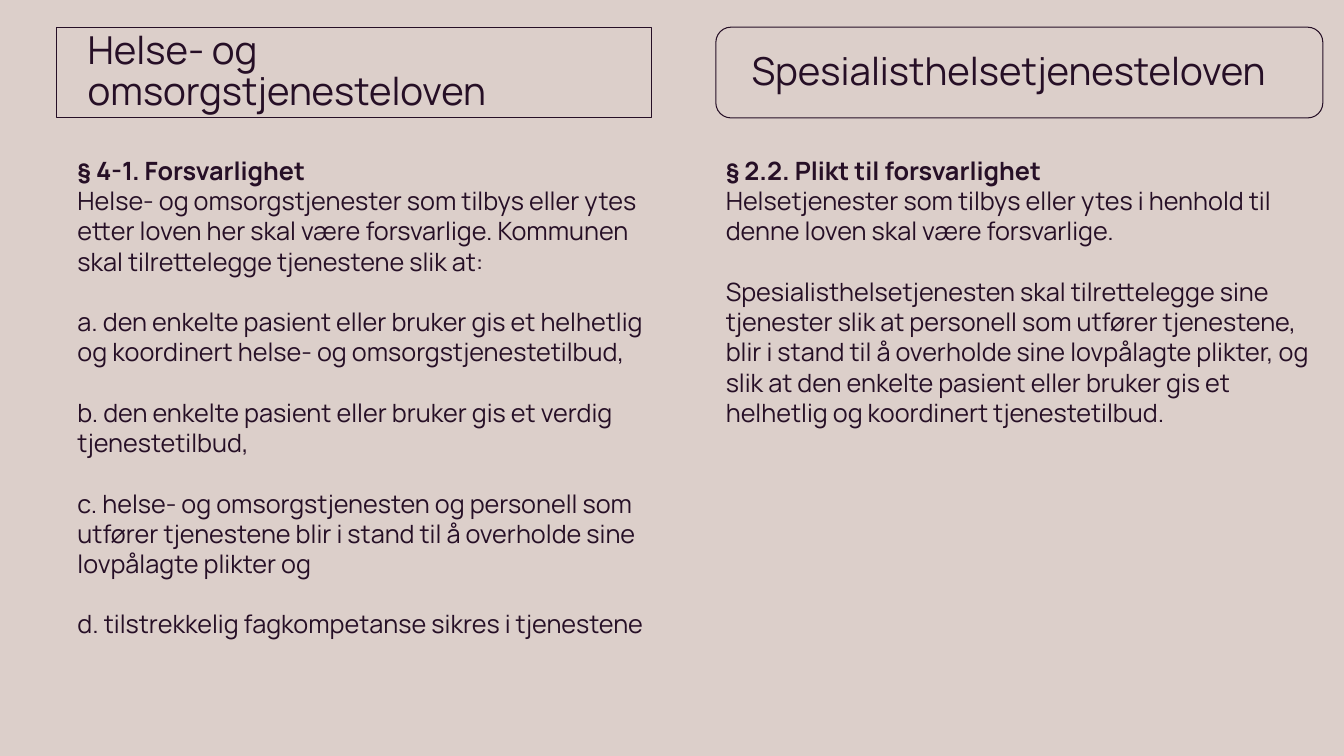
from dataclasses import dataclass

from pptx import Presentation
from pptx.dml.color import RGBColor
from pptx.enum.shapes import MSO_SHAPE
from pptx.enum.text import MSO_ANCHOR, PP_ALIGN
from pptx.slide import Slide
from pptx.util import Inches, Pt

BACKGROUND = RGBColor(0xDC, 0xCF, 0xCA)
PLUM = RGBColor(0x26, 0x0F, 0x26)
FONT = "Manrope"
TITLE_TOP, TITLE_HEIGHT = 0.27, 0.9
CORNER_RADIUS = 0.15
BODY_TOP = 1.49
BODY_SIZE = Pt(18)
PARAGRAPH_GAP = Pt(21.6)  # one line of body text


@dataclass
class LawColumn:
    title: str
    outline: MSO_SHAPE
    title_left: float
    title_width: float
    body_left: float
    body_width: float
    body_height: float
    section: str
    provisions: list[str]


COLUMNS = [
    LawColumn(
        "Helse- og omsorgstjenesteloven", MSO_SHAPE.RECTANGLE,
        0.56, 5.9, 0.67, 5.99, 5.59,
        "§ 4-1. Forsvarlighet",
        [
            "Helse- og omsorgstjenester som tilbys eller ytes etter loven her skal "
            "være forsvarlige. Kommunen skal tilrettelegge tjenestene slik at:",
            "a. den enkelte pasient eller bruker gis et helhetlig og koordinert "
            "helse- og omsorgstjenestetilbud,",
            "b. den enkelte pasient eller bruker gis et verdig tjenestetilbud,",
            "c. helse- og omsorgstjenesten og personell som utfører tjenestene blir "
            "i stand til å overholde sine lovpålagte plikter og",
            "d. tilstrekkelig fagkompetanse sikres i tjenestene",
        ],
    ),
    LawColumn(
        "Spesialisthelsetjenesteloven", MSO_SHAPE.ROUNDED_RECTANGLE,
        7.1, 6.02, 7.1, 6.19, 3.16,
        "§ 2.2. Plikt til forsvarlighet",
        [
            "Helsetjenester som tilbys eller ytes i henhold til denne loven skal "
            "være forsvarlige.",
            "Spesialisthelsetjenesten skal tilrettelegge sine tjenester slik at "
            "personell som utfører tjenestene, blir i stand til å overholde sine "
            "lovpålagte plikter, og slik at den enkelte pasient eller bruker gis et "
            "helhetlig og koordinert tjenestetilbud.",
        ],
    ),
]


def style_font(paragraph, size: Pt, bold: bool = False) -> None:
    font = paragraph.font
    font.name, font.size, font.bold = FONT, size, bold
    font.color.rgb = PLUM


def draw_title(slide: Slide, column: LawColumn) -> None:
    shape = slide.shapes.add_shape(
        column.outline, Inches(column.title_left), Inches(TITLE_TOP),
        Inches(column.title_width), Inches(TITLE_HEIGHT))
    if column.outline == MSO_SHAPE.ROUNDED_RECTANGLE:
        shape.adjustments[0] = CORNER_RADIUS / TITLE_HEIGHT
    shape.shadow.inherit = False
    shape.fill.background()
    shape.line.color.rgb = PLUM
    shape.line.width = Pt(0.75)

    frame = shape.text_frame
    frame.word_wrap = True
    frame.vertical_anchor = MSO_ANCHOR.MIDDLE
    frame.margin_left = frame.margin_right = Inches(0.31)
    frame.margin_top = frame.margin_bottom = Inches(0.05)
    paragraph = frame.paragraphs[0]
    paragraph.text = column.title
    paragraph.alignment = PP_ALIGN.LEFT
    paragraph.line_spacing = 0.9
    paragraph.space_before = Pt(10)
    style_font(paragraph, Pt(27.5))


def draw_body(slide: Slide, column: LawColumn) -> None:
    box = slide.shapes.add_textbox(
        Inches(column.body_left), Inches(BODY_TOP),
        Inches(column.body_width), Inches(column.body_height))
    frame = box.text_frame
    frame.word_wrap = True
    heading = frame.paragraphs[0]
    heading.text = column.section
    style_font(heading, BODY_SIZE, bold=True)
    for index, provision in enumerate(column.provisions):
        paragraph = frame.add_paragraph()
        paragraph.text = provision
        style_font(paragraph, BODY_SIZE)
        if index > 0:
            paragraph.space_before = PARAGRAPH_GAP


def main() -> None:
    presentation = Presentation()
    presentation.slide_width = Inches(13.33)
    presentation.slide_height = Inches(7.5)
    slide = presentation.slides.add_slide(presentation.slide_layouts[6])
    slide.background.fill.solid()
    slide.background.fill.fore_color.rgb = BACKGROUND

    # One law per column: framed title above its provisions
    for column in COLUMNS:
        draw_title(slide, column)
        draw_body(slide, column)

    presentation.save("out.pptx")


if __name__ == "__main__":
    main()
